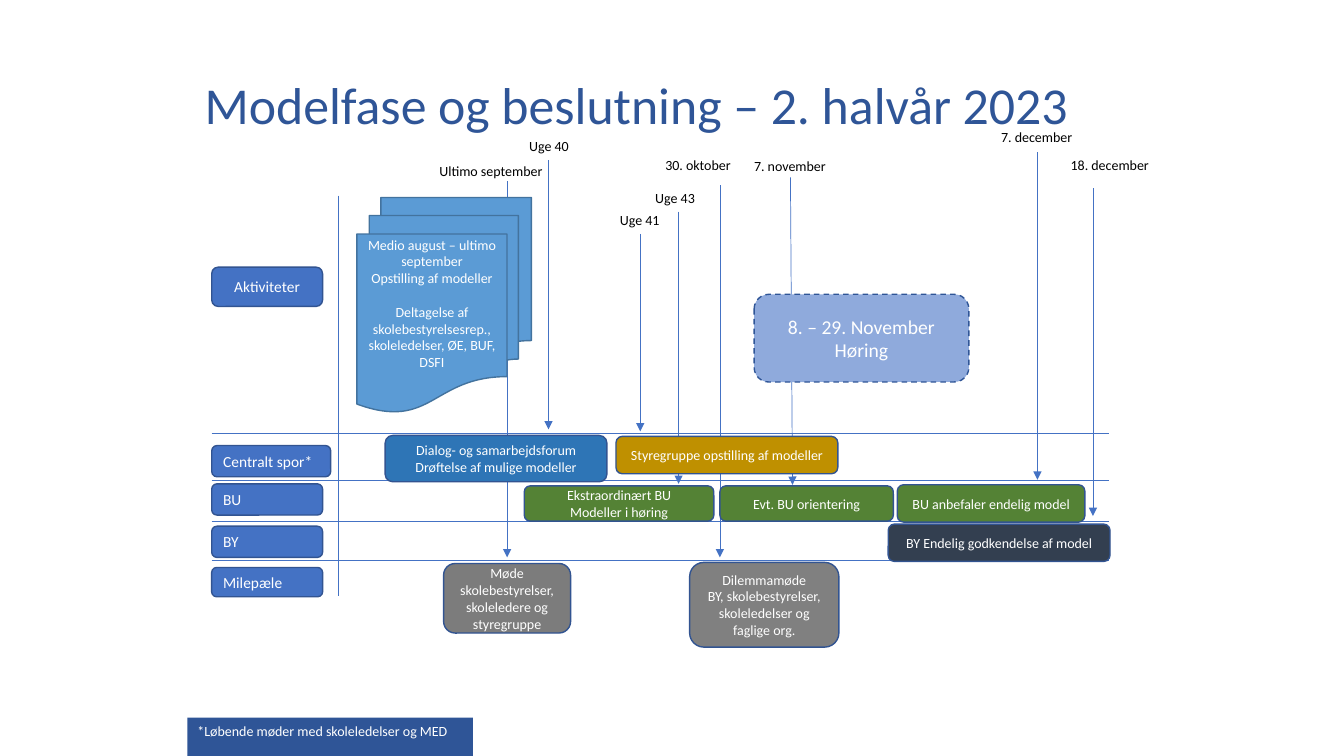
from lxml import etree
from pptx import Presentation
from pptx.dml.color import RGBColor as RGB
from pptx.enum.dml import MSO_LINE_DASH_STYLE as Dash
from pptx.enum.shapes import MSO_CONNECTOR as Conn, MSO_SHAPE as Shape
from pptx.enum.text import MSO_ANCHOR as Anchor, MSO_AUTO_SIZE as Fit, PP_ALIGN as Align
from pptx.oxml.ns import qn
from pptx.util import Inches, Pt

INK = {
    "blue": "4472C4", "edge": "325491", "deep": "2F5597", "sky": "5B9BD5",
    "rim": "43739E", "pale": "8FAADC", "mid": "2E75B6", "gold": "BF9000",
    "green": "548235", "navy": "333F50", "gray": "7C7C7C", "ash": "808080",
    "white": "FFFFFF", "black": "000000",
}

deck = Presentation()
deck.slide_width, deck.slide_height = Inches(13.33), Inches(7.5)
slide = deck.slides.add_slide(deck.slide_layouts[6])


def write(item, text, size, color="white", align=Align.LEFT, anchor=Anchor.TOP):
    frame = item.text_frame
    frame.text = text
    frame.word_wrap = True
    frame.vertical_anchor = anchor
    for para in frame.paragraphs:
        para.alignment = align
        for run in para.runs:
            run.font.size = Pt(size)
            run.font.name = "Calibri"
            run.font.color.rgb = RGB.from_string(INK[color])
    return frame


def box(kind, place, fill, edge=None):
    item = slide.shapes.add_shape(kind, *[Inches(n) for n in place])
    item.shadow.inherit = False
    item.fill.solid()
    item.fill.fore_color.rgb = RGB.from_string(INK[fill])
    if edge:
        item.line.color.rgb = RGB.from_string(INK[edge])
        item.line.width = Pt(1)
    else:
        item.line.fill.background()
    return item


# Grid rules, then dated arrows: x1, y1, x2, y2
rules = [(2.1, y, 11, y) for y in (4.3, 4.77, 5.17, 5.56)]
rules.append((3.36, 1.94, 3.36, 5.91))
arrows = [
    (5.03, 1.8, 5.03, 5.53), (5.44, 1.59, 5.44, 4.26),
    (6.35, 2.32, 6.35, 4.28), (6.73, 2.1, 6.73, 4.8),
    (7.14, 1.84, 7.14, 5.53), (7.84, 1.76, 7.86, 4.81),
    (10.29, 1.51, 10.29, 4.76), (10.84, 1.87, 10.84, 5.12),
]
for ends in rules + arrows:
    link = slide.shapes.add_connector(Conn.STRAIGHT, *[Inches(n) for n in ends])
    link.line.color.rgb = RGB.from_string(INK["blue"])
    link.line.width = Pt(0.5)
    props = link._element.spPr
    if ends in arrows:
        etree.SubElement(props.find(qn("a:ln")), qn("a:tailEnd"), type="triangle")
    etree.SubElement(props, qn("a:effectLst"))

# Title
title = slide.shapes.add_textbox(Inches(2.03), Inches(0.85), Inches(9.07), Inches(0.47))
frame = write(title, "Modelfase og beslutning – 2. halvår 2023", 37, "deep", anchor=Anchor.BOTTOM)
frame.margin_left = frame.margin_right = frame.margin_top = frame.margin_bottom = 0
frame.paragraphs[0].line_spacing = 0.7

# Date labels: text, left, top, width
dates = [
    ("Ultimo september", 4.26, 1.56, 1.29), ("Uge 40", 5.15, 1.32, 0.65),
    ("Uge 41", 6.05, 2.05, 0.65), ("Uge 43", 6.4, 1.83, 0.65),
    ("30. oktober", 6.5, 1.5, 0.9), ("7. november", 7.38, 1.51, 0.98),
    ("7. december", 9.83, 1.23, 0.98), ("18. december", 10.52, 1.5, 1.05),
]
for text, x, y, w in dates:
    label = slide.shapes.add_textbox(Inches(x), Inches(y), Inches(w), Inches(0.27))
    frame = write(label, text, 10, "black")
    frame.word_wrap = False
    frame.auto_size = Fit.SHAPE_TO_FIT_TEXT

# Row heads: text, top, width, height, alignment
heads = [
    ("Aktiviteter", 2.65, 1.1, 0.39, Align.CENTER),
    ("Centralt spor*", 4.42, 1.18, 0.31, Align.LEFT),
    ("BU", 4.8, 1.1, 0.31, Align.LEFT),
    ("BY", 5.22, 1.1, 0.31, Align.LEFT),
    ("Milepæle", 5.63, 1.1, 0.29, Align.LEFT),
]
for text, y, w, h, align in heads:
    head = box(Shape.ROUNDED_RECTANGLE, (2.1, y, w, h), "blue", "edge")
    write(head, text, 11, align=align, anchor=Anchor.MIDDLE)

# Stack of model papers
stack = box(Shape.FLOWCHART_MULTIDOCUMENT, (3.54, 1.96, 1.73, 2.13), "sky", "rim")
frame = write(
    stack,
    "Medio august – ultimo september\nOpstilling af modeller\n"
    "Deltagelse af skolebestyrelsesrep., skoleledelser, ØE, BUF, DSFI",
    10, align=Align.CENTER)
frame.margin_top = Inches(0.02)
frame.paragraphs[2].space_before = Pt(12)

# Steps: text, place, fill
steps = [
    ("Møde skolebestyrelser, skoleledere og styregruppe", (4.4, 5.59, 1.26, 0.69), "gray"),
    ("BU anbefaler endelig model", (8.9, 4.81, 1.86, 0.37), "green"),
    ("Styregruppe opstilling af modeller", (6.11, 4.33, 2.2, 0.37), "gold"),
    ("Dialog- og samarbejdsforum Drøftelse af mulige modeller", (3.82, 4.32, 2.2, 0.46), "mid"),
    ("BY Endelig godkendelse af model", (8.81, 5.2, 2.2, 0.37), "navy"),
    ("Evt. BU orientering", (7.14, 4.82, 1.72, 0.35), "green"),
    ("Dilemmamøde\nBY, skolebestyrelser, skoleledelser og faglige org.", (6.84, 5.58, 1.48, 0.84), "ash"),
    ("Ekstraordinært BU\nModeller i høring", (5.2, 4.82, 1.88, 0.35), "green"),
]
for text, place, fill in steps:
    step = box(Shape.ROUNDED_RECTANGLE, place, fill, "edge")
    write(step, text, 10, align=Align.CENTER, anchor=Anchor.MIDDLE)

# Hearing period
hearing = box(Shape.ROUNDED_RECTANGLE, (7.48, 2.92, 2.13, 0.87), "pale", "deep")
hearing.line.dash_style = Dash.DASH
write(hearing, "8. – 29. November Høring", 14, align=Align.CENTER, anchor=Anchor.MIDDLE)

# Footnote
note = box(Shape.RECTANGLE, (1.86, 7.12, 2.83, 0.38), "deep")
write(note, "*Løbende møder med skoleledelser og MED", 10)

deck.save("out.pptx")
